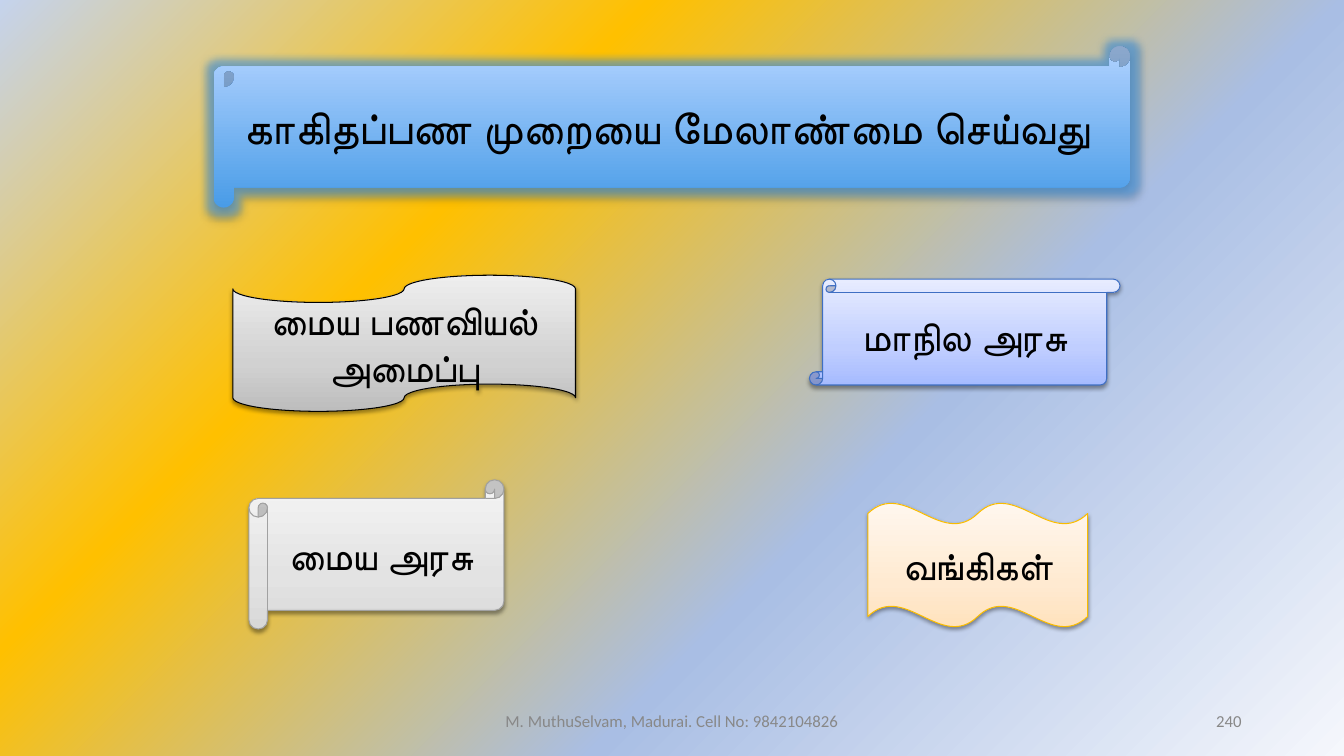
from lxml.etree import SubElement
from pptx import Presentation
from pptx.dml.color import RGBColor
from pptx.enum.shapes import MSO_SHAPE
from pptx.enum.text import MSO_ANCHOR, PP_ALIGN
from pptx.oxml import parse_xml
from pptx.oxml.ns import nsdecls, qn
from pptx.util import Pt

BLACK = RGBColor(0x00, 0x00, 0x00)
GREY = RGBColor(0x88, 0x88, 0x88)
BLUE = RGBColor(0x3F, 0x6F, 0xC3)
SILVER = RGBColor(0xA1, 0xA1, 0xA1)
GOLD = RGBColor(0xF9, 0xBC, 0x00)
GLOW = RGBColor(0x49, 0x9C, 0xE7)


def tones(*pairs):
    return [(spot, RGBColor.from_string(code)) for spot, code in pairs]


def shades(low, mid, high):
    return tones((0, low), (35, mid), (100, high))


BACK = tones((0, "F5F7FC"), (36, "A9BEE4"), (69, "FFC000"), (100, "C5D3ED"))
SKY = tones((0, "499CE7"), (100, "B0D2FF"))
ASH = shades("BDBDBD", "D1D1D1", "EEEEEE")
LILAC = shades("A6BBFF", "C0CEFF", "E7ECFF")
PEARL = shades("D8D8D8", "E3E3E3", "F4F4F4")
PEACH = shades("FFE2BD", "FFEAD1", "FFF7EE")

UPWARD = '<a:lin ang="16200000" scaled="0"/>'
CORNER = '<a:path path="circle"><a:fillToRect l="100000" t="100000"/></a:path>'

TITLE = {"size": Pt(32), "name": "Roboto"}
LABEL = {"size": Pt(28), "name": "Roboto"}
SMALL = {"size": Pt(12), "name": "Calibri"}


def blend(owner, stops, course):
    marks = "".join(
        f'<a:gs pos="{spot * 1000}"><a:srgbClr val="{tone}"/></a:gs>'
        for spot, tone in stops
    )
    fill = parse_xml(
        f'<a:gradFill {nsdecls("a")} rotWithShape="1">'
        f"<a:gsLst>{marks}</a:gsLst>{course}</a:gradFill>"
    )
    owner.replace(owner.find(qn("a:solidFill")), fill)


def effect(shape, kind, tone, alpha, **sizes):
    group = shape._element.spPr.find(qn("a:effectLst"))
    part = SubElement(group, qn(kind), {k: str(v) for k, v in sizes.items()})
    hue = SubElement(part, qn("a:srgbClr"), val=str(tone))
    SubElement(hue, qn("a:alpha"), val=str(alpha * 1000))


def write(shape, text, style, tone, align):
    frame = shape.text_frame
    frame.word_wrap = True
    frame.vertical_anchor = MSO_ANCHOR.MIDDLE
    para = frame.paragraphs[0]
    para.alignment = align
    run = para.add_run()
    run.text = text
    for key, value in style.items():
        setattr(run.font, key, value)
    run.font.color.rgb = tone


def banner(slide, kind, box, text, stops, edge=None, style=LABEL,
           align=PP_ALIGN.CENTER, glow=None, depth=(38, 1.6)):
    shape = slide.shapes.add_shape(kind, *map(Pt, box))
    shape.shadow.inherit = False
    shape.fill.solid()
    blend(shape._element.spPr, stops, UPWARD)
    if edge is None:
        shape.line.fill.background()
    else:
        shape.line.color.rgb = edge
        shape.line.width = Pt(0.75)
    if glow is not None:
        effect(shape, "a:glow", glow, 60, rad=Pt(11))
    alpha, drop = depth
    effect(shape, "a:outerShdw", BLACK, alpha, blurRad=Pt(3.1), dist=Pt(drop),
           dir=5400000, rotWithShape=0)
    write(shape, text, style, BLACK, align)
    return shape


def footer(slide, box, text, align):
    write(slide.shapes.add_textbox(*map(Pt, box)), text, SMALL, GREY, align)


def main():
    deck = Presentation()
    deck.slide_width, deck.slide_height = Pt(960), Pt(540)
    slide = deck.slides.add_slide(deck.slide_layouts[6])
    slide.background.fill.solid()
    blend(next(slide._element.iter(qn("p:bgPr"))), BACK, CORNER)

    banner(slide, MSO_SHAPE.HORIZONTAL_SCROLL, (152.6, 33.1, 654.5, 115.2),
           "காகிதப்பண முறையை மேலாண்மை செய்வது", SKY, style=TITLE,
           align=PP_ALIGN.LEFT, glow=GLOW, depth=(35, 1.8))
    footer(slide, (318, 500.5, 324, 28.8),
           "M. MuthuSelvam, Madurai. Cell No: 9842104826", PP_ALIGN.CENTER)
    footer(slide, (678, 500.5, 216, 28.8), "240", PP_ALIGN.RIGHT)

    banner(slide, MSO_SHAPE.FLOWCHART_PUNCHED_TAPE, (166.3, 196.6, 244.8, 97.2),
           "மைய பணவியல் அமைப்பு", ASH, BLACK)
    banner(slide, MSO_SHAPE.VERTICAL_SCROLL, (578.2, 199.4, 221.8, 75.6),
           "மாநில அரசு", LILAC, BLUE)
    banner(slide, MSO_SHAPE.HORIZONTAL_SCROLL, (177.8, 342.7, 182.2, 106.6),
           "மைய அரசு", PEARL, SILVER)
    wave = banner(slide, MSO_SHAPE.DOUBLE_WAVE, (619.9, 359.3, 157, 88.6),
                  "வங்கிகள்", PEACH, GOLD)
    wave.adjustments[0] = 0.085
    deck.save("out.pptx")


if __name__ == "__main__":
    main()
